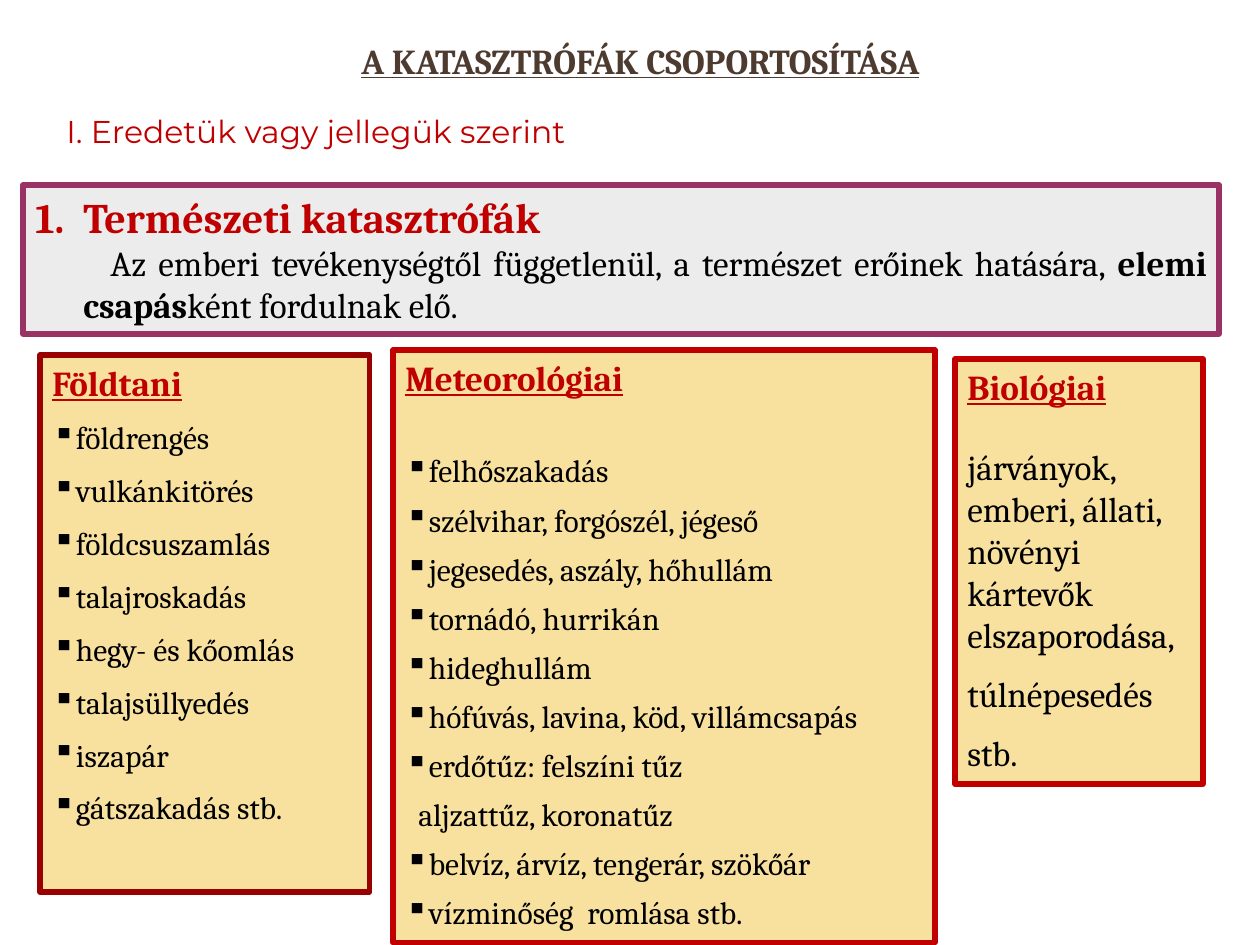
from lxml import etree
from pptx import Presentation
from pptx.dml.color import RGBColor
from pptx.enum.shapes import MSO_SHAPE
from pptx.enum.text import MSO_ANCHOR, PP_ALIGN
from pptx.oxml.ns import qn
from pptx.util import Emu, Pt

RECTANGLE = MSO_SHAPE.RECTANGLE
TOP, MIDDLE = MSO_ANCHOR.TOP, MSO_ANCHOR.MIDDLE
LEFT, CENTER, JUSTIFY = PP_ALIGN.LEFT, PP_ALIGN.CENTER, PP_ALIGN.JUSTIFY
TITLE_ONLY = 5
PX = 914400 // 126
COLORS = {
    "title": "4E3B30", "red": "C00000", "text": "000000", "gray": "ECECEC",
    "purple": "993366", "sand": "F8E19F", "maroon": "990000",
}
SERIF, SANS = "Cambria", "Montserrat"
HANGING = 48

GEOLOGICAL = [
    "földrengés", "vulkánkitörés", "földcsuszamlás", "talajroskadás",
    "hegy- és kőomlás", "talajsüllyedés", "iszapár", "gátszakadás stb.",
]
WEATHER = [
    "felhőszakadás", "szélvihar, forgószél, jégeső",
    "jegesedés, aszály, hőhullám", "tornádó, hurrikán", "hideghullám",
    "hófúvás, lavina, köd, villámcsapás", "erdőtűz: felszíni tűz",
]
FIRES = "aljzattűz, koronatűz"
WATER = ["belvíz, árvíz, tengerár, szökőár", "vízminőség  romlása stb."]
BIOLOGICAL = ["járványok,", "emberi, állati, növényi kártevők elszaporodása,"]
BIOLOGICAL_END = ["túlnépesedés", "stb."]


class SlideBuilder:
    def __init__(self, width, height):
        self.deck = Presentation()
        self.deck.slide_width = Emu(width * PX)
        self.deck.slide_height = Emu(height * PX)
        self.page = self.deck.slides.add_slide(self.deck.slide_layouts[TITLE_ONLY])

    def color(self, name):
        return RGBColor.from_string(COLORS[name])

    def title(self, text, *bounds):
        box = self.page.shapes.title
        box.left, box.top, box.width, box.height = [Emu(n * PX) for n in bounds]
        box.text_frame.vertical_anchor = MIDDLE
        self.paragraph(box, [text], 20, "title", bold=True, underline=True, align=CENTER)

    def label(self, text, *bounds):
        box = self.page.shapes.add_textbox(*[Emu(n * PX) for n in bounds])
        box.text_frame.word_wrap = False
        self.paragraph(box, [text], 18, "red", font=SANS)

    def panel(self, fill, line, *bounds):
        box = self.page.shapes.add_shape(RECTANGLE, *[Emu(n * PX) for n in bounds])
        box.shadow.inherit = False
        box.fill.solid()
        box.fill.fore_color.rgb = self.color(fill)
        box.line.color.rgb = self.color(line)
        box.line.width = Pt(3)
        box.text_frame.word_wrap = True
        box.text_frame.vertical_anchor = TOP
        return box

    def card(self, heading, line, gap, *bounds):
        box = self.panel("sand", line, *bounds)
        self.paragraph(box, [heading], 20, "red", bold=True, underline=True, after=gap)
        return box

    def items(self, box, texts, size=18, spacing=1.0, bullet="▪", margin=0):
        for text in texts:
            self.paragraph(box, [text], size, "text", spacing=spacing,
                           bullet=bullet, margin=margin)

    def paragraph(self, box, texts, size, color, font=SERIF, bold=False,
                  underline=False, align=LEFT, spacing=1.0, after=0,
                  bullet=None, number=None, margin=0, indent=0, strong=None):
        frame = box.text_frame
        para = frame.paragraphs[0] if not frame.text else frame.add_paragraph()
        para.alignment = align
        para.line_spacing = spacing
        para.space_before = Pt(0)
        para.space_after = Pt(after)
        para.font.name = font
        para.font.size = Pt(size)
        para.font.bold = bold
        para.font.underline = underline
        para.font.color.rgb = self.color(color)
        for text in texts:
            span = para.add_run()
            span.text = text
            if text == strong:
                span.font.bold = True
        self.mark(para, bullet, number, margin, indent)

    def mark(self, para, bullet, number, margin, indent):
        properties = para._p.get_or_add_pPr()
        properties.set("marL", str(margin * PX))
        properties.set("indent", str(indent * PX))
        tag, key, value = "a:buNone", None, None
        if bullet:
            tag, key, value = "a:buChar", "char", bullet
        elif number:
            tag, key, value = "a:buAutoNum", "type", number
        node = etree.Element(qn(tag))
        if key:
            node.set(key, value)
        properties.find(qn("a:defRPr")).addprevious(node)

    def save(self):
        self.deck.save("out.pptx")


def main():
    slide = SlideBuilder(1260, 945)
    slide.title("A KATASZTRÓFÁK CSOPORTOSÍTÁSA", 42, 30, 1197, 60)

    banner = slide.panel("gray", "purple", 23, 185, 1196, 149)
    slide.paragraph(banner, ["Természeti katasztrófák"], 24, "red", bold=True,
                    align=JUSTIFY, number="arabicPeriod", margin=HANGING, indent=-HANGING)
    slide.paragraph(
        banner,
        ["Az emberi tevékenységtől függetlenül, a természet erőinek hatására, ",
         "elemi csapás", "ként fordulnak elő."],
        20, "text", align=JUSTIFY, margin=HANGING, indent=27, strong="elemi csapás")

    geological = slide.card("Földtani", "maroon", 0, 40, 355, 330, 537)
    slide.items(geological, GEOLOGICAL, spacing=1.4)

    weather = slide.card("Meteorológiai", "red", 24, 393, 350, 542, 593)
    slide.items(weather, WEATHER, spacing=1.3)
    slide.items(weather, [FIRES], spacing=1.3, bullet=None, margin=13)
    slide.items(weather, WATER, spacing=1.3)

    biological = slide.card("Biológiai", "red", 22, 955, 359, 248, 425)
    slide.items(biological, BIOLOGICAL, size=20, bullet=None)
    slide.items(biological, BIOLOGICAL_END, size=20, spacing=1.4, bullet=None)

    slide.label("I. Eredetük vagy jellegük szerint", 54, 106, 587, 50)
    slide.save()


if __name__ == "__main__":
    main()
